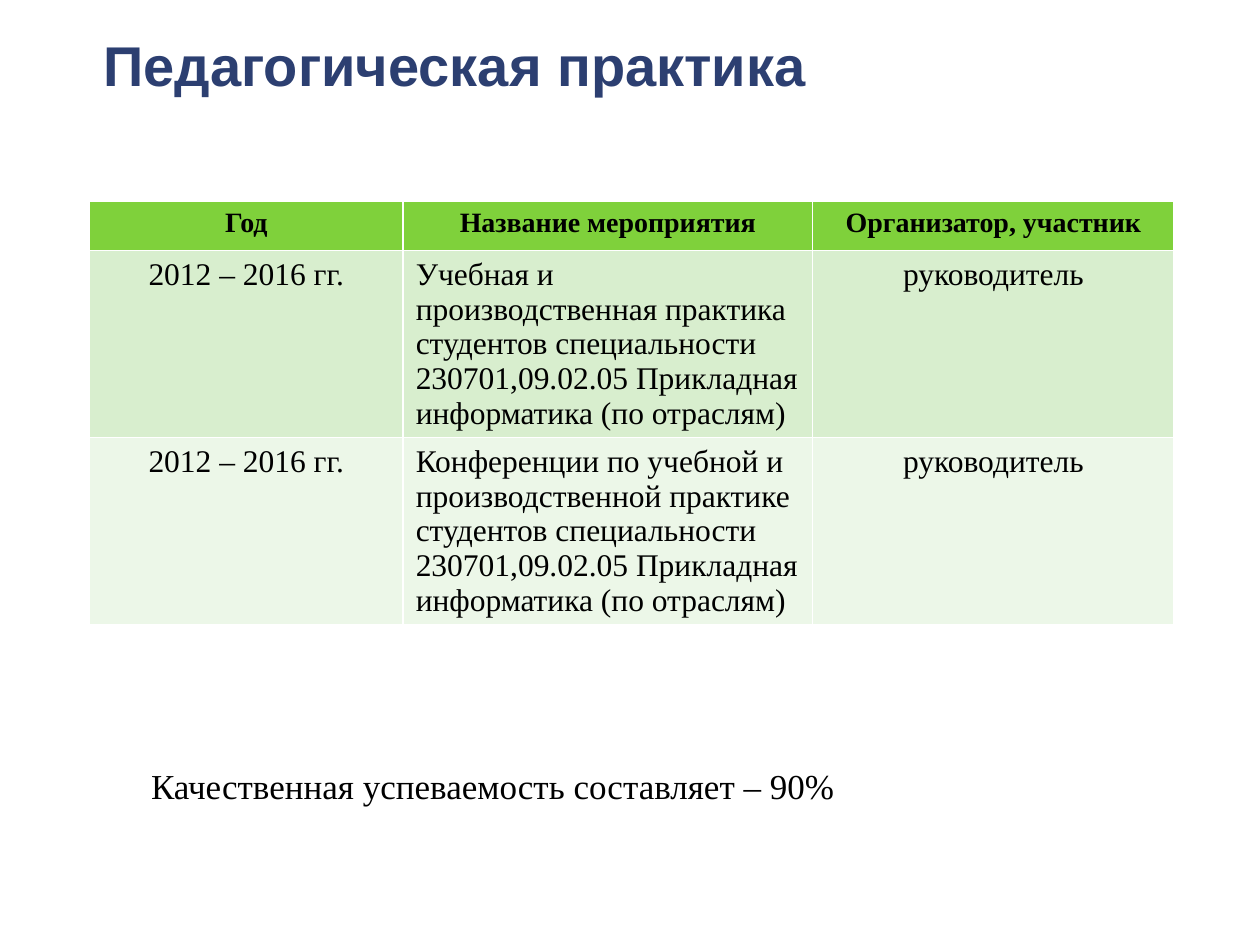
from dataclasses import dataclass

from pptx import Presentation
from pptx.dml.color import RGBColor
from pptx.enum.text import MSO_ANCHOR, PP_ALIGN
from pptx.util import Inches, Pt


@dataclass(frozen=True)
class Theme:
    """Colours, fonts and type sizes of the slide."""
    title_font: str = "Arial"
    body_font: str = "Times New Roman"
    title_color: str = "2C3F71"
    text_color: str = "000000"
    header_fill: str = "7FD13B"
    band_fills: tuple[str, str] = ("D8EECE", "ECF7E8")
    title_size: int = 32
    header_size: int = 16
    cell_size: int = 18
    note_size: int = 20


@dataclass(frozen=True)
class Practice:
    """One row of the practice table."""
    years: str
    event: str
    role: str


THEME = Theme()
HEADERS = ("Год", "Название мероприятия", "Организатор, участник")
COL_WIDTHS = (2.49, 3.25, 2.87)
HEADER_HEIGHT, ROW_HEIGHT = 0.39, 1.48
SPECIALTY = "студентов специальности 230701,09.02.05 Прикладная информатика (по отраслям)"
PRACTICES = (
    Practice("2012 – 2016 гг.", f"Учебная и производственная практика {SPECIALTY}", "руководитель"),
    Practice("2012 – 2016 гг.", f"Конференции по учебной и производственной практике {SPECIALTY}",
             "руководитель"),
)


def add_text(tf, text: str, size: int, font: str = THEME.body_font,
             color: str = THEME.text_color, bold: bool = False,
             align: PP_ALIGN = PP_ALIGN.LEFT, spacing: float = 1.0) -> None:
    """Write one formatted run into the first paragraph."""
    tf.word_wrap = True
    p = tf.paragraphs[0]
    p.alignment = align
    p.line_spacing = spacing
    r = p.add_run()
    r.text = text
    r.font.name = font
    r.font.size = Pt(size)
    r.font.bold = bold
    r.font.color.rgb = RGBColor.from_string(color)


def fill_cell(cell, fill: str) -> None:
    """Give a cell a solid fill."""
    cell.fill.solid()
    cell.fill.fore_color.rgb = RGBColor.from_string(fill)


def add_title(s, text: str) -> None:
    """Place and format the title placeholder."""
    sp = s.shapes.title
    sp.left, sp.top = Inches(0.72), Inches(0.01)
    sp.width, sp.height = Inches(8.57), Inches(1.07)
    sp.text_frame.vertical_anchor = MSO_ANCHOR.MIDDLE
    add_text(sp.text_frame, text, THEME.title_size, THEME.title_font,
             THEME.title_color, bold=True, spacing=0.9)


def add_practice_table(s, practices: tuple[Practice, ...]) -> None:
    """Draw the table with a header and banded rows."""
    height = HEADER_HEIGHT + ROW_HEIGHT * len(practices)
    table = s.shapes.add_table(len(practices) + 1, len(HEADERS), Inches(0.71), Inches(1.6),
                               Inches(sum(COL_WIDTHS)), Inches(height)).table
    for col, width in zip(table.columns, COL_WIDTHS):
        col.width = Inches(width)
    table.rows[0].height = Inches(HEADER_HEIGHT)
    for i, text in enumerate(HEADERS):
        cell = table.cell(0, i)
        fill_cell(cell, THEME.header_fill)
        if i:
            cell.margin_left = cell.margin_right = Inches(0.07)
            cell.margin_top, cell.margin_bottom = Inches(0.01), Inches(0)
        add_text(cell.text_frame, text, THEME.header_size, bold=True,
                 align=PP_ALIGN.CENTER, spacing=1.15 if i else 1.0)
    for i, practice in enumerate(practices):
        table.rows[i + 1].height = Inches(ROW_HEIGHT)
        for j, text in enumerate((practice.years, practice.event, practice.role)):
            cell = table.cell(i + 1, j)
            fill_cell(cell, THEME.band_fills[i % 2])
            add_text(cell.text_frame, text, THEME.cell_size,
                     align=PP_ALIGN.LEFT if j == 1 else PP_ALIGN.CENTER)


def add_note(s, text: str) -> None:
    """Add the result line below the table."""
    sp = s.shapes.add_textbox(Inches(1.1), Inches(6.02), Inches(8.11), Inches(0.44))
    add_text(sp.text_frame, text, THEME.note_size)


def main() -> None:
    """Build and save the slide."""
    prs = Presentation()
    prs.slide_width, prs.slide_height = Inches(10), Inches(7.5)
    s = prs.slides.add_slide(prs.slide_layouts[5])
    add_title(s, "Педагогическая практика")
    add_practice_table(s, PRACTICES)
    add_note(s, "Качественная успеваемость составляет – 90%")
    prs.save("out.pptx")


if __name__ == "__main__":
    main()
